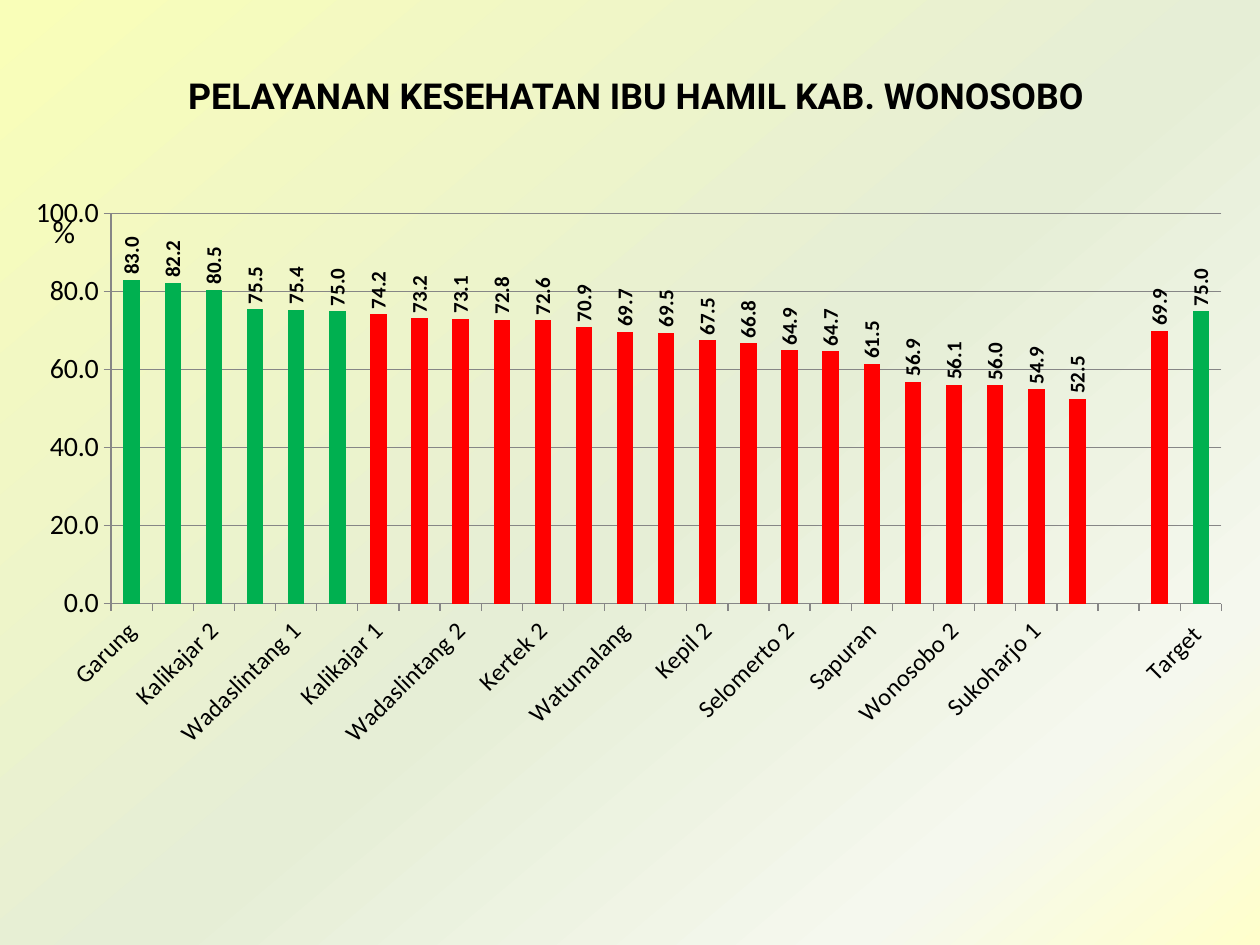
from lxml import etree
from pptx import Presentation
from pptx import util as u
from pptx.chart import data as chart_data
from pptx.dml.color import RGBColor
from pptx.enum import chart as ch
from pptx.enum import text
from pptx.oxml import parse_xml
from pptx.oxml.ns import nsdecls, qn

GREEN, RED, BLACK, GREY = "00B050", "FF0000", "000000", "868686"
TARGET = 75
COVERAGE = [
    ("Garung", 83), ("Selomerto 1", 82.2), ("Kalikajar 2", 80.5),
    ("Kepil 1", 75.5), ("Wadaslintang 1", 75.4), ("Kalibawang", 75),
    ("Kalikajar 1", 74.2), ("Kejajar  1", 73.2), ("Wadaslintang 2", 73.1),
    ("Mojotengah", 72.8), ("Kertek 2", 72.6), ("Wonosobo 1", 70.9),
    ("Watumalang", 69.7), ("Kertek 1", 69.5), ("Kepil 2", 67.5),
    ("Kejajar 2", 66.8), ("Selomerto 2", 64.9), ("Leksono 1", 64.7),
    ("Sapuran", 61.5), ("Leksono 2", 56.9), ("Wonosobo 2", 56.1),
    ("Kaliwiro", 56), ("Sukoharjo 1", 54.9), ("Sukoharjo 2", 52.5),
    ("", None), ("Kab. Wsb", 69.9), ("Target ", TARGET),
]


def rgb(value):
    return RGBColor.from_string(value)


def style(font, name, size, bold=False):
    font.name, font.size, font.bold = name, u.Pt(size), bold
    font.color.rgb = rgb(BLACK)


deck = Presentation()
deck.slide_width, deck.slide_height = u.Cm(25.4), u.Cm(19.05)
page = deck.slides.add_slide(deck.slide_layouts[5])

# Background gradient
fill = page.background.fill
fill.gradient()
fill.gradient_angle = 310
stops = page.element.xpath(".//p:bg//a:gsLst")[0]
stops.clear()
for percent, colour in [(0, "F9FEB8"), (53, "E6EED6"), (83, "F5F8EE"), (100, "FFFFCC")]:
    stop = etree.SubElement(stops, qn("a:gs"), pos=str(percent * 1000))
    etree.SubElement(stop, qn("a:srgbClr"), val=colour)

# Title
title = page.shapes.title
title.left, title.top, title.width, title.height = u.Cm(1.9), u.Cm(1.12), u.Cm(21.84), u.Cm(1.6)
title.text_frame.vertical_anchor = text.MSO_ANCHOR.MIDDLE
para = title.text_frame.paragraphs[0]
para.alignment = text.PP_ALIGN.CENTER
span = para.add_run()
span.text = "PELAYANAN KESEHATAN IBU HAMIL KAB. WONOSOBO"
style(span.font, "Roboto", 20.4, True)

# Unit of the value axis
box = page.shapes.add_textbox(u.Cm(0.81), u.Cm(4.14), u.Cm(0.8), u.Cm(1.02))
box.text_frame.word_wrap = False
span = box.text_frame.paragraphs[0].add_run()
span.text = "%"
style(span.font, "Calibri", 18)

# Coverage chart
data = chart_data.CategoryChartData(number_format="0.0")
data.categories = [name for name, value in COVERAGE]
data.add_series("Series 1", [value for name, value in COVERAGE])
chart = page.shapes.add_chart(
    ch.XL_CHART_TYPE.COLUMN_CLUSTERED,
    u.Cm(0.25), u.Cm(3.73), u.Cm(24.87), u.Cm(11.56), data).chart
chart.has_legend = chart.has_title = False
style(chart.font, "Calibri", 10)

plot = chart.plots[0]
plot.gap_width = 150
plot.vary_by_categories = False
bars = plot.series[0]
bars.format.fill.solid()
bars.format.fill.fore_color.rgb = rgb(RED)
for index, (name, value) in enumerate(COVERAGE):
    if value is not None and value >= TARGET:
        bar_fill = bars.points[index].format.fill
        bar_fill.solid()
        bar_fill.fore_color.rgb = rgb(GREEN)

plot.has_data_labels = True
labels = plot.data_labels
labels.show_value = True
labels.number_format, labels.number_format_is_linked = "0.0", False
labels.position = ch.XL_LABEL_POSITION.OUTSIDE_END
style(labels.font, "Calibri", 12, True)

values = chart.value_axis
values.minimum_scale, values.maximum_scale, values.major_unit = 0, 100, 20
values.tick_labels.number_format = "0.0"
values.tick_labels.number_format_is_linked = False
values.major_gridlines.format.line.color.rgb = rgb(GREY)
for axis, size in [(chart.category_axis, 14), (values, 16)]:
    style(axis.tick_labels.font, "Calibri", size)
    axis.major_tick_mark = ch.XL_TICK_MARK.OUTSIDE
    axis.format.line.color.rgb = rgb(GREY)

# Slanted names, upright values, every second name shown
for parent, degrees in [("c:catAx", -45), ("c:dLbls", -90)]:
    body = chart.element.xpath(f".//{parent}/c:txPr/a:bodyPr")[0]
    body.set("rot", str(degrees * 60000))
    body.set("vert", "horz")
skip = parse_xml(f'<c:tickLblSkip {nsdecls("c")} val="2"/>')
chart.element.xpath(".//c:catAx/c:noMultiLvlLbl")[0].addprevious(skip)

# Fixed plot area, as fractions of the chart
area = chart.element.xpath(".//c:plotArea")[0]
for old in area.findall(qn("c:layout")):
    area.remove(old)
layout = parse_xml(f'<c:layout {nsdecls("c")}><c:manualLayout/></c:layout>')
for tag, setting in [("layoutTarget", "inner"), ("xMode", "edge"), ("yMode", "edge"),
                     ("x", 0.08), ("y", 0.05), ("w", 0.9), ("h", 0.68)]:
    etree.SubElement(layout[0], qn(f"c:{tag}"), val=str(setting))
area.insert(0, layout)

deck.save("out.pptx")
